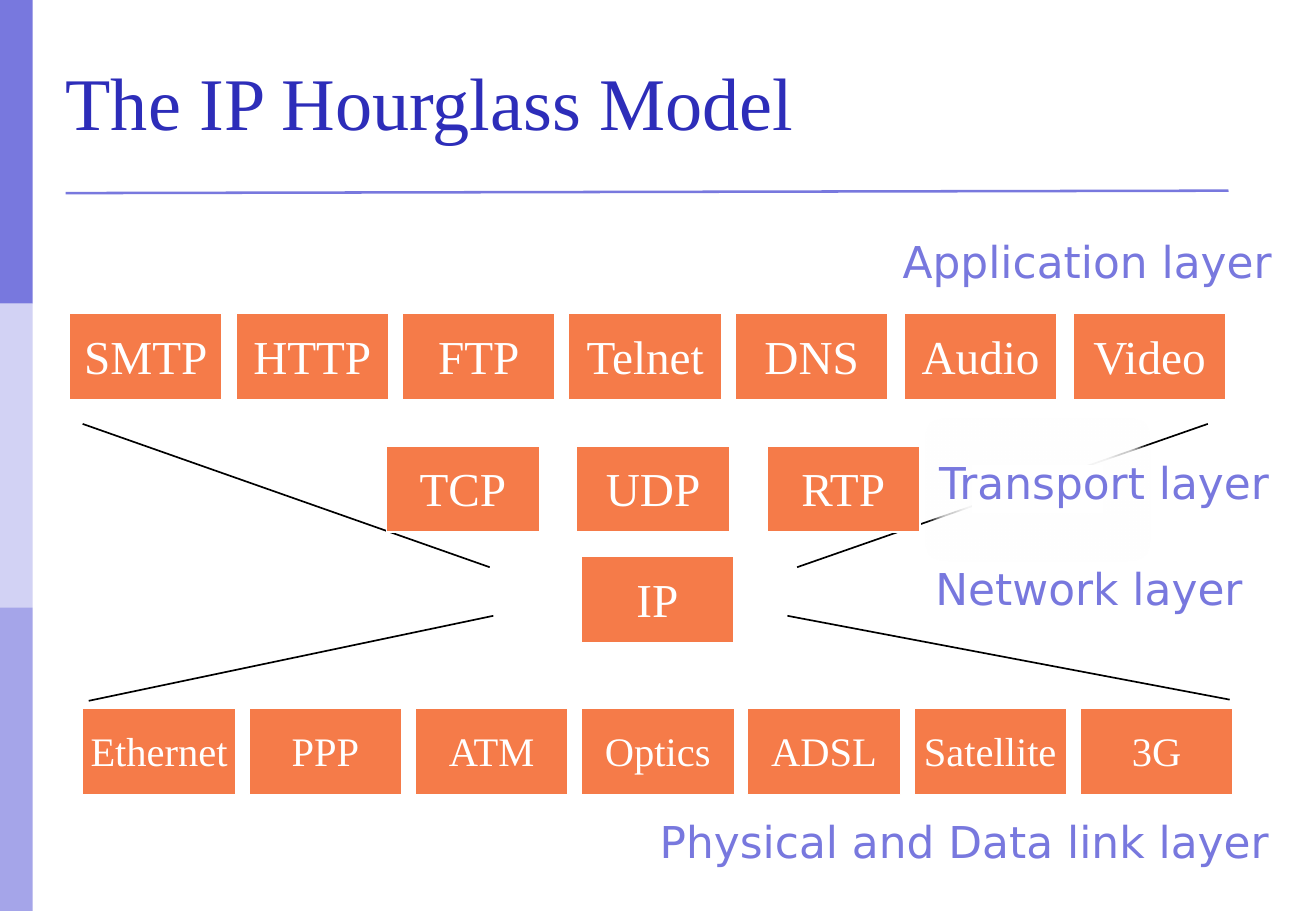
import pptx
import pptx.dml.color
import pptx.enum.shapes
import pptx.enum.text
import pptx.oxml
import pptx.util

RGBColor = pptx.dml.color.RGBColor
MSO_SHAPE = pptx.enum.shapes.MSO_SHAPE
ANCHOR = pptx.enum.text.MSO_ANCHOR
ALIGN = pptx.enum.text.PP_ALIGN

VIOLET = RGBColor(0x78, 0x78, 0xDE)
PALE_VIOLET = RGBColor(0xD2, 0xD2, 0xF4)
SOFT_VIOLET = RGBColor(0xA5, 0xA5, 0xE9)
NAVY = RGBColor(0x2D, 0x2D, 0xB9)
ORANGE = RGBColor(0xF5, 0x7B, 0x49)
WHITE = RGBColor(0xFF, 0xFF, 0xFF)
BLACK = RGBColor(0x00, 0x00, 0x00)

SERIF = "Times New Roman"
SANS = "DejaVu Sans"
CELL = 0.1
COLUMNS, ROWS = 108.3, 75
BOX_WIDTH, BOX_HEIGHT = 12.6, 7.1
BAND_WIDTH = 2.7

BANDS = (VIOLET, PALE_VIOLET, SOFT_VIOLET)
FUNNEL = (
    (7.3, 57.7, 40.6, 50.7),
    (101.2, 57.6, 64.8, 50.7),
    (6.8, 34.9, 40.3, 46.7),
    (99.4, 34.9, 65.6, 46.7),
)
PROTOCOL_ROWS = (
    (("SMTP", "HTTP", "FTP", "Telnet", "DNS"), 5.7, 13.7, 25.8, 28, 1),
    (("Audio", "Video"), 74.4, 13.9, 25.8, 28, 1),
    (("TCP", "UDP", "RTP"), 31.8, 15.65, 36.7, 28, 1),
    (("IP",), 47.8, 0, 45.8, 28, 1),
    (("Ethernet", "PPP", "ATM", "Optics", "ADSL", "Satellite", "3G"),
     6.8, 13.68, 58.3, 24, 0.5),
)
LAYER_LABELS = (
    ("Application layer", 73.3, 18.9, 32.4),
    ("Transport layer", 76.3, 37.1, 30),
    ("Network layer", 76, 45.8, 27.6),
    ("Physical and Data link layer", 53.3, 66.7, 52.8),
)


def grid(cells):
    return pptx.util.Inches(cells * CELL)


def add_xml(parent, tag, **attributes):
    child = parent.makeelement(pptx.oxml.ns.qn(tag), attributes)
    parent.append(child)
    return child


def write_text(shape, text, font=SERIF, size=28, color=WHITE, align=ALIGN.LEFT,
               anchor=ANCHOR.TOP, spacing=0.93, insets=(1, 0.8, 1, 0.5), wrap=True):
    frame = shape.text_frame
    frame.word_wrap = wrap
    frame.vertical_anchor = anchor
    (frame.margin_left, frame.margin_top,
     frame.margin_right, frame.margin_bottom) = map(grid, insets)
    paragraph = frame.paragraphs[0]
    paragraph.alignment = align
    paragraph.line_spacing = spacing
    run = paragraph.add_run()
    run.text = text
    run.font.name = font
    run.font.size = pptx.util.Pt(size)
    run.font.color.rgb = color


class HourglassSlide:
    """Draws slide elements on a grid of tenth-inch cells."""

    def __init__(self, presentation):
        self.slide = presentation.slides.add_slide(presentation.slide_layouts[5])
        self.shapes = self.slide.shapes

    def title(self, text, left, top, width, height):
        shape = self.shapes.title
        shape.left, shape.top = grid(left), grid(top)
        shape.width, shape.height = grid(width), grid(height)
        write_text(shape, text, size=44, color=NAVY, anchor=ANCHOR.MIDDLE,
                   spacing=0.78, insets=(0, 0, 0, 0))

    def block(self, left, top, width, height, fill, kind=MSO_SHAPE.RECTANGLE):
        shape = self.shapes.add_shape(kind, *map(grid, (left, top, width, height)))
        shape.shadow.inherit = False
        shape.fill.solid()
        shape.fill.fore_color.rgb = fill
        shape.line.fill.background()
        return shape

    def protocol(self, text, left, top, size, inset):
        shape = self.block(left, top, BOX_WIDTH, BOX_HEIGHT, ORANGE,
                           MSO_SHAPE.ROUNDED_RECTANGLE)
        shape.adjustments[0] = 0
        shape.line.color.rgb = WHITE
        shape.line.width = pptx.util.Pt(1)
        write_text(shape, text, size=size, align=ALIGN.CENTER, anchor=ANCHOR.MIDDLE,
                   insets=(inset, 0.8, inset, 0.5))

    def glowing_patch(self, left, top, width, height, radius):
        shape = self.block(left, top, width, height, WHITE)
        effects = shape.element.spPr.find(pptx.oxml.ns.qn("a:effectLst"))
        glow = add_xml(effects, "a:glow", rad=str(grid(radius)))
        color = add_xml(glow, "a:srgbClr", val=str(WHITE))
        add_xml(color, "a:alpha", val="80000")

    def line(self, start_x, start_y, end_x, end_y, color=BLACK, width=1):
        connector = self.shapes.add_connector(
            pptx.enum.shapes.MSO_CONNECTOR.STRAIGHT,
            *map(grid, (start_x, start_y, end_x, end_y)))
        connector.line.color.rgb = color
        connector.line.width = pptx.util.Pt(width)
        add_xml(connector.element.spPr, "a:effectLst")

    def label(self, text, left, top, width, height=5.4):
        shape = self.shapes.add_textbox(*map(grid, (left, top, width, height)))
        write_text(shape, text, font=SANS, size=26, color=VIOLET, wrap=False)


def main():
    presentation = pptx.Presentation()
    presentation.slide_width = grid(COLUMNS)
    presentation.slide_height = grid(ROWS)
    hourglass = HourglassSlide(presentation)

    band_height = ROWS / len(BANDS)
    for index, color in enumerate(BANDS):
        hourglass.block(0, index * band_height, BAND_WIDTH, band_height, color)
    hourglass.line(5.4, 15.9, 101.1, 15.7, color=VIOLET, width=1.5)
    hourglass.title("The IP Hourglass Model", 5.4, 2.7, 97.4, 12.7)

    for ends in FUNNEL:
        hourglass.line(*ends)
    for names, left, step, top, size, inset in PROTOCOL_ROWS:
        for index, name in enumerate(names):
            hourglass.protocol(name, left + index * step, top, size, inset)
    hourglass.glowing_patch(80, 38.3, 10.8, 4, radius=2)
    for label in LAYER_LABELS:
        hourglass.label(*label)

    presentation.save("out.pptx")


if __name__ == "__main__":
    main()
